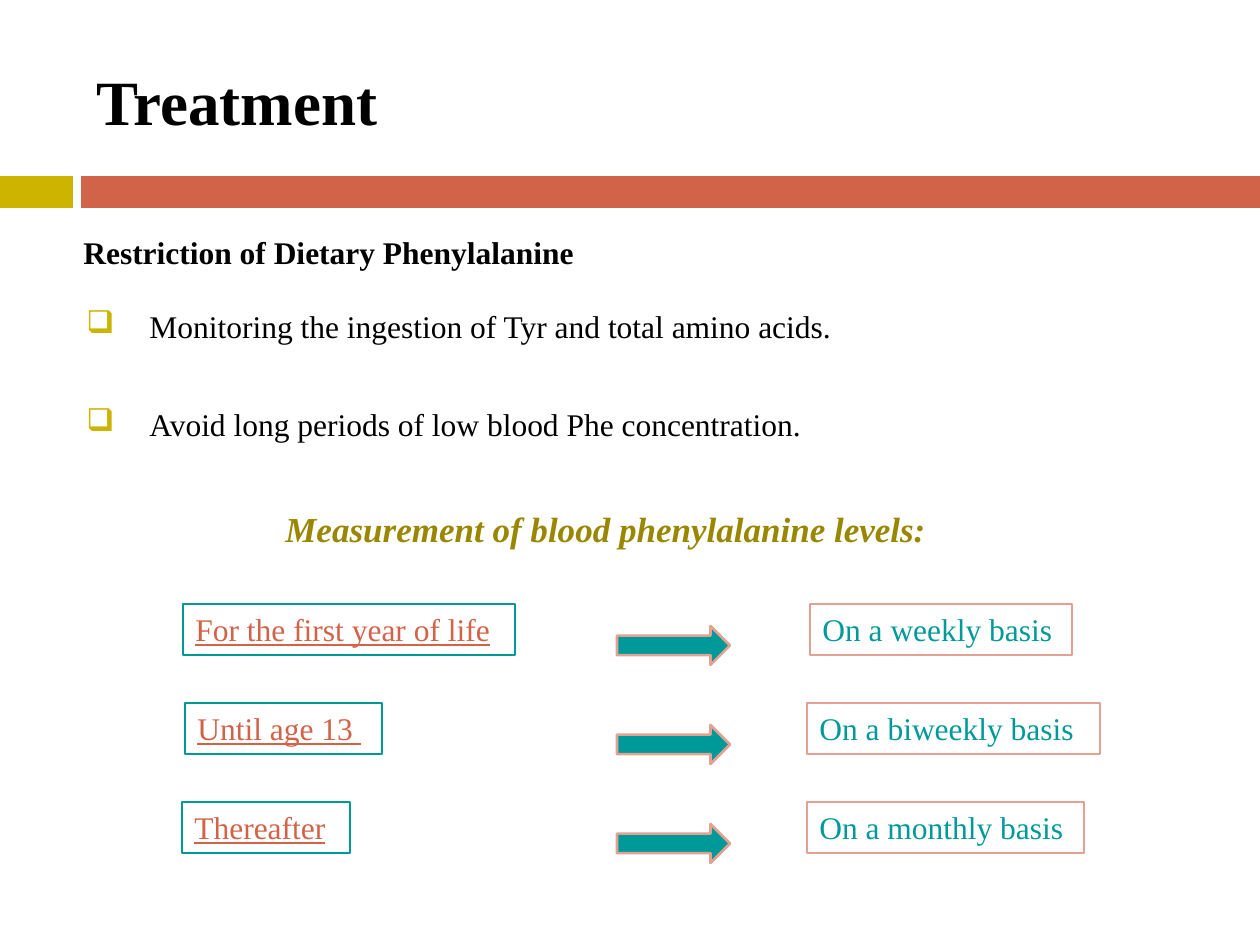
from lxml import etree
from pptx import Presentation
from pptx.dml.color import RGBColor
from pptx.enum.shapes import MSO_SHAPE
from pptx.enum.text import MSO_ANCHOR
from pptx.oxml.ns import qn
from pptx.util import Pt

RECT = MSO_SHAPE.RECTANGLE
ARROW = MSO_SHAPE.RIGHT_ARROW
MIDDLE = MSO_ANCHOR.MIDDLE
BLACK = RGBColor(0x00, 0x00, 0x00)
GOLD = RGBColor(0xCC, 0xB4, 0x00)
OLIVE = RGBColor(0x99, 0x87, 0x00)
RUST = RGBColor(0xD1, 0x63, 0x49)
PINK = RGBColor(0xE3, 0xA1, 0x92)
TEAL = RGBColor(0x00, 0x99, 0x99)


def px(n):
    return round(n * 914400 / 126)


class Deck:
    font = "Times New Roman"
    size = 18

    def __init__(self, wide, high):
        self.prs = Presentation()
        self.prs.slide_width, self.prs.slide_height = px(wide), px(high)
        self.slide = self.prs.slides.add_slide(self.prs.slide_layouts[6])

    def style(self, para, color, size=None, bold=False, slant=False, under=False):
        font = para.font
        font.name = self.font
        font.size = Pt(size or self.size)
        font.color.rgb = color
        font.bold, font.italic, font.underline = bold, slant, under

    def shape(self, kind, box, fill, line=None, width=1.5):
        item = self.slide.shapes.add_shape(kind, *map(px, box))
        item.shadow.inherit = False
        item.fill.solid()
        item.fill.fore_color.rgb = fill
        if line is None:
            item.line.fill.background()
        else:
            item.line.color.rgb = line
            item.line.width = Pt(width)
        return item

    def text(self, words, box, color, line=None, wrap=True, **look):
        item = self.slide.shapes.add_textbox(*map(px, box))
        item.text_frame.word_wrap = wrap
        para = item.text_frame.paragraphs[0]
        para.text = words
        self.style(para, color, **look)
        if line is not None:
            item.line.color.rgb = line
            item.line.width = Pt(0.75)
        return item

    def bullets(self, lines, box, color, mark, gap):
        frame = self.slide.shapes.add_textbox(*map(px, box)).text_frame
        frame.word_wrap = True
        for i, words in enumerate(lines):
            para = frame.add_paragraph() if i else frame.paragraphs[0]
            para.text = words
            self.style(para, color)
            para.space_before = Pt(gap if i else 0)
            props = para._p.get_or_add_pPr()
            props.set("marL", str(px(63)))
            props.set("indent", str(-px(63)))
            tint = etree.Element(qn("a:buClr"))
            etree.SubElement(tint, qn("a:srgbClr"), val=str(mark))
            sign = etree.Element(qn("a:buChar"), char="❑")
            spot = list(props).index(props.find(qn("a:spcBef"))) + 1
            props.insert(spot, tint)
            props.insert(spot + 1, sign)


def main():
    deck = Deck(1260, 945)
    deck.shape(RECT, (0, 176, 73, 32), GOLD)
    deck.shape(RECT, (81, 176, 1179, 32), RUST)
    title = deck.text("Treatment", (84, 32, 1124, 136), BLACK, size=36, bold=True)
    title.text_frame.vertical_anchor = MIDDLE

    deck.text("Restriction of Dietary Phenylalanine", (71, 227, 519, 50),
              BLACK, wrap=False, bold=True)
    deck.bullets(["Monitoring the ingestion of Tyr and total amino acids.",
                  "Avoid long periods of low blood Phe concentration."],
                 (74, 301, 1101, 149), BLACK, GOLD, 34.5)
    deck.text("Measurement of blood phenylalanine levels:", (273, 501, 668, 55),
              OLIVE, size=20, bold=True, slant=True)

    rows = [
        ("For the first year of life", 183, 332, "On a weekly basis", 810, 262),
        ("Until age 13 ", 185, 197, "On a biweekly basis", 807, 293),
        ("Thereafter", 182, 168, "On a monthly basis", 807, 277),
    ]
    for i, (age, left, wide, pace, start, span) in enumerate(rows):
        top = 604 + 99 * i
        deck.text(age, (left, top, wide, 51), RUST, TEAL, under=True)
        deck.shape(ARROW, (617, top + 22, 113, 39), TEAL, PINK)
        deck.text(pace, (start, top, span, 51), TEAL, PINK)

    deck.prs.save("out.pptx")


if __name__ == "__main__":
    main()
